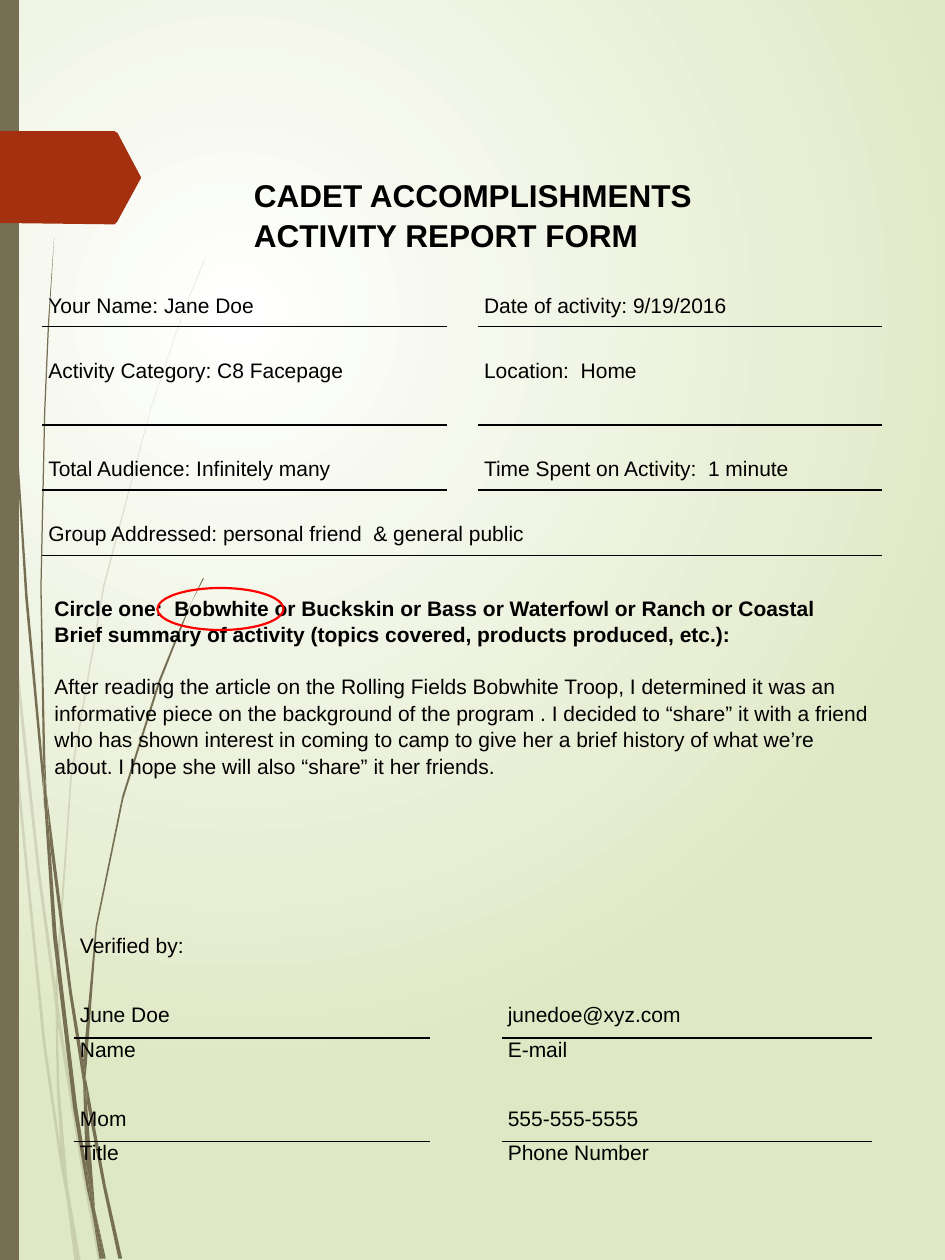
from lxml import etree
from pptx import Presentation, util as u
from pptx.dml.color import RGBColor
from pptx.enum import shapes, text
from pptx.oxml.ns import qn

Pt = u.Pt
THEME = dict(font="Arial", ink="000000", bark="766F54", flag="A53010", ring="FF0000",
             glow="FFFFFF", meadow="DFE8C4", title=18, body=12, rule=1, ring_width=1.25,
             leading=1.05, faint=20)
NO_GRID_STYLE = "{2D5ABB26-0587-4C30-8999-92F81FD0307C}"

# Outlines are listed in hundredths of an inch.
UNIT = Pt(0.72)
FAINT_GRASS = [
    [(6, 467), (4, 429), (0, 375), (0, 399), (5, 459)],
    [(30, 695), (44, 799), (44, 781), (32, 693), (7, 460), (9, 501)],
    [(48, 809), (46, 794), (46, 814), (64, 925), (78, 1001), (81, 1001), (66, 922)],
    [(62, 1001), (64, 1001), (55, 948)],
    [(48, 910), (36, 826), (16, 625), (9, 501), (6, 467), (14, 626), (34, 828), (48, 925),
     (53, 952), (52, 943)],
    [(4, 421), (4, 429), (7, 458), (7, 460), (6, 421), (3, 214), (5, 33), (4, 33), (2, 214)],
    [(44, 799), (45, 861), (48, 911), (50, 923), (55, 948), (54, 942), (47, 861), (46, 814),
     (46, 811)],
    [(46, 778), (57, 616), (83, 465), (119, 327), (140, 264), (151, 234), (163, 205),
     (163, 204), (151, 233), (140, 263), (119, 326), (82, 464), (56, 615), (44, 778),
     (44, 781), (46, 794)],
    [(53, 952), (59, 1001), (62, 1001)],
    [(46, 811), (46, 814), (46, 794), (44, 781), (44, 799)],
    [(50, 923), (48, 911), (52, 943), (53, 952), (62, 1001), (55, 948)],
]
DARK_GRASS = [
    [(4, 147), (10, 310), (20, 474), (35, 636), (35, 642), (34, 610), (34, 604), (22, 473),
     (11, 310), (5, 146), (3, 64), (2, 0), (2, 64)],
    [(55, 789), (66, 860), (66, 845), (66, 842), (57, 787), (37, 629), (40, 673)],
    [(70, 865), (68, 855), (69, 875), (82, 943), (94, 999), (97, 999), (84, 941)],
    [(68, 922), (61, 877), (45, 742), (40, 673), (35, 636), (42, 743), (58, 879), (69, 944),
     (73, 962), (72, 956)],
    [(37, 629), (36, 604), (33, 466), (36, 326), (39, 257), (43, 188), (38, 257), (35, 326),
     (32, 466), (34, 599)],
    [(83, 999), (84, 999), (75, 958)],
    [(35, 637), (40, 674), (37, 630), (34, 599), (34, 605)],
    [(69, 844), (77, 736), (98, 634), (127, 542), (144, 499), (152, 478), (162, 459),
     (161, 459), (152, 478), (143, 498), (126, 540), (97, 632), (76, 735), (66, 842),
     (68, 855)],
    [(73, 962), (79, 999), (81, 999)],
    [(66, 860), (68, 922), (72, 941), (75, 958), (75, 954), (69, 875), (67, 868)],
    [(66, 860), (67, 867), (69, 875), (68, 855), (66, 842), (66, 845)],
    [(72, 941), (68, 922), (72, 956), (73, 962), (81, 999), (83, 999), (75, 958)],
]
FLAG = [(111, 143), (93, 176), (92, 177), (91, 178), (84, 178), (0, 177), (0, 104),
        (91, 104), (92, 105), (93, 105), (111, 139), (112, 141)]

# Cells: (row, first column, columns spanned, text, ruled below)
ACTIVITY = dict(
    at=(24, 168), cols=(124.5, 107, 17.5, 141, 90),
    rows=(18.7, 18.7, 37.4, 18.7, 18.7, 18.7, 18.7),
    cells=[(0, 0, 2, "Your Name: Jane Doe", True),
           (0, 3, 2, "Date of activity: 9/19/2016", True),
           (2, 0, 2, "Activity Category: C8 Facepage", True),
           (2, 3, 2, "Location:  Home", True),
           (4, 0, 2, "Total Audience: Infinitely many", True),
           (4, 3, 2, "Time Spent on Activity:  1 minute", True),
           (6, 0, 5, "Group Addressed: personal friend  & general public", True)])
VERIFICATION = dict(
    at=(42.1, 534.2), cols=(203.5, 41, 211.5), rows=(19.7,) * 7,
    cells=[(0, 0, 1, "Verified by:", False),
           (2, 0, 1, "June Doe", True), (2, 2, 1, "junedoe@xyz.com", True),
           (3, 0, 1, "Name", False), (3, 2, 1, "E-mail", False),
           (5, 0, 1, "Mom", True), (5, 2, 1, "555-555-5555", True),
           (6, 0, 1, "Title", False), (6, 2, 1, "Phone Number", False)])

# Paragraphs: (text, bold, space before)
TITLE = [("CADET ACCOMPLISHMENTS", True, 0), ("ACTIVITY REPORT FORM", True, 0)]
SUMMARY = [
    ("Circle one:  Bobwhite or Buckskin or Bass or Waterfowl or Ranch or Coastal", True, 0),
    ("Brief summary of activity (topics covered, products produced, etc.):", True, 0),
    ("After reading the article on the Rolling Fields Bobwhite Troop, I determined it was an "
     "informative piece on the background of the program . I decided to “share” it with a "
     "friend who has shown interest in coming to camp to give her a brief history of what "
     "we’re about. I hope she will also “share” it her friends.", False, 14.5)]


def color(name):
    return RGBColor.from_string(THEME[name])


def style_runs(p, size, bold=False):
    for r in p.runs:
        r.font.name, r.font.size, r.font.bold = THEME["font"], Pt(size), bold
        r.font.color.rgb = color("ink")


def set_background(s):
    """Radial glow centred a quarter of the way in from the top left."""
    fill = s.background.fill
    fill.gradient()
    for stop, position, name in zip(fill.gradient_stops, (0, 1), ("glow", "meadow")):
        stop.position, stop.color.rgb = position, color(name)
    grad = s.background._cSld.find(".//" + qn("a:gradFill"))
    grad.remove(grad.find(qn("a:lin")))
    circle = etree.SubElement(grad, qn("a:path"), path="circle")
    etree.SubElement(circle, qn("a:fillToRect"), l="50000", t="50000", r="100000", b="100000")


def fill_plain(sp, name, opacity=100):
    sp.shadow.inherit = False
    sp.fill.solid()
    sp.fill.fore_color.rgb = color(name)
    sp.line.fill.background()
    if opacity < 100:
        rgb = sp._element.spPr.find(qn("a:solidFill"))[0]
        etree.SubElement(rgb, qn("a:alpha"), val=str(opacity * 1000))


def add_outline(s, points, name, opacity=100):
    builder = s.shapes.build_freeform(*points[0], scale=UNIT)
    builder.add_line_segments(points[1:], close=True)
    fill_plain(builder.convert_to_shape(), name, opacity)


def rule_below(cell):
    ln = etree.Element(qn("a:lnB"), w=str(Pt(THEME["rule"])))
    etree.SubElement(etree.SubElement(ln, qn("a:solidFill")), qn("a:srgbClr"), val=THEME["ink"])
    cell._tc.get_or_add_tcPr().insert(0, ln)


def add_form(s, form):
    rows, cols = form["rows"], form["cols"]
    frame = s.shapes.add_table(len(rows), len(cols), *map(Pt, form["at"]),
                               Pt(sum(cols)), Pt(sum(rows)))
    table = frame.table
    table.first_row = table.horz_banding = False
    table._tbl.tblPr.find(qn("a:tableStyleId")).text = NO_GRID_STYLE
    for column, width in zip(table.columns, cols):
        column.width = Pt(width)
    for row, height in zip(table.rows, rows):
        row.height = Pt(height)
    for cell in table.iter_cells():
        cell.fill.background()
        cell.margin_left = cell.margin_right = Pt(3.6)
        cell.margin_top = cell.margin_bottom = 0
    for row, col, span, words, ruled in form["cells"]:
        cell = table.cell(row, col)
        if span > 1:
            cell.merge(table.cell(row, col + span - 1))
        cell.text_frame.text = words
        style_runs(cell.text_frame.paragraphs[0], THEME["body"])
        if ruled:
            for c in range(col, col + span):
                rule_below(table.cell(row, c))
    for cell in table.iter_cells():
        p = cell.text_frame.paragraphs[0]
        if not p.runs:  # keeps empty rows from growing
            etree.SubElement(p._p, qn("a:endParaRPr"), sz=str(THEME["body"] * 100))


def add_text(s, box, paragraphs, size):
    tf = s.shapes.add_textbox(*map(Pt, box)).text_frame
    tf.word_wrap = True
    tf.vertical_anchor = text.MSO_ANCHOR.TOP
    tf.text = "\n".join(words for words, _, _ in paragraphs)
    for p, (_, bold, gap) in zip(tf.paragraphs, paragraphs):
        p.line_spacing, p.space_before = THEME["leading"], Pt(gap)
        style_runs(p, size, bold)


def main():
    prs = Presentation()
    prs.slide_width, prs.slide_height = Pt(540), Pt(720)
    s = prs.slides.add_slide(prs.slide_layouts[6])
    set_background(s)
    for blade in FAINT_GRASS:
        add_outline(s, blade, "bark", THEME["faint"])
    for blade in DARK_GRASS:
        add_outline(s, blade, "bark")
    edge = s.shapes.add_shape(shapes.MSO_SHAPE.RECTANGLE, 0, 0, Pt(10.8), Pt(720))
    fill_plain(edge, "bark")
    add_outline(s, FLAG, "flag")
    add_form(s, ACTIVITY)
    add_form(s, VERIFICATION)
    add_text(s, (24, 336, 480, 131), SUMMARY, THEME["body"])
    add_text(s, (138, 96, 270, 51), TITLE, THEME["title"])
    ring = s.shapes.add_shape(shapes.MSO_SHAPE.OVAL, Pt(90), Pt(336), Pt(72), Pt(24))
    ring.shadow.inherit = False
    ring.fill.background()
    ring.line.color.rgb, ring.line.width = color("ring"), Pt(THEME["ring_width"])
    prs.save("out.pptx")


if __name__ == "__main__":
    main()
